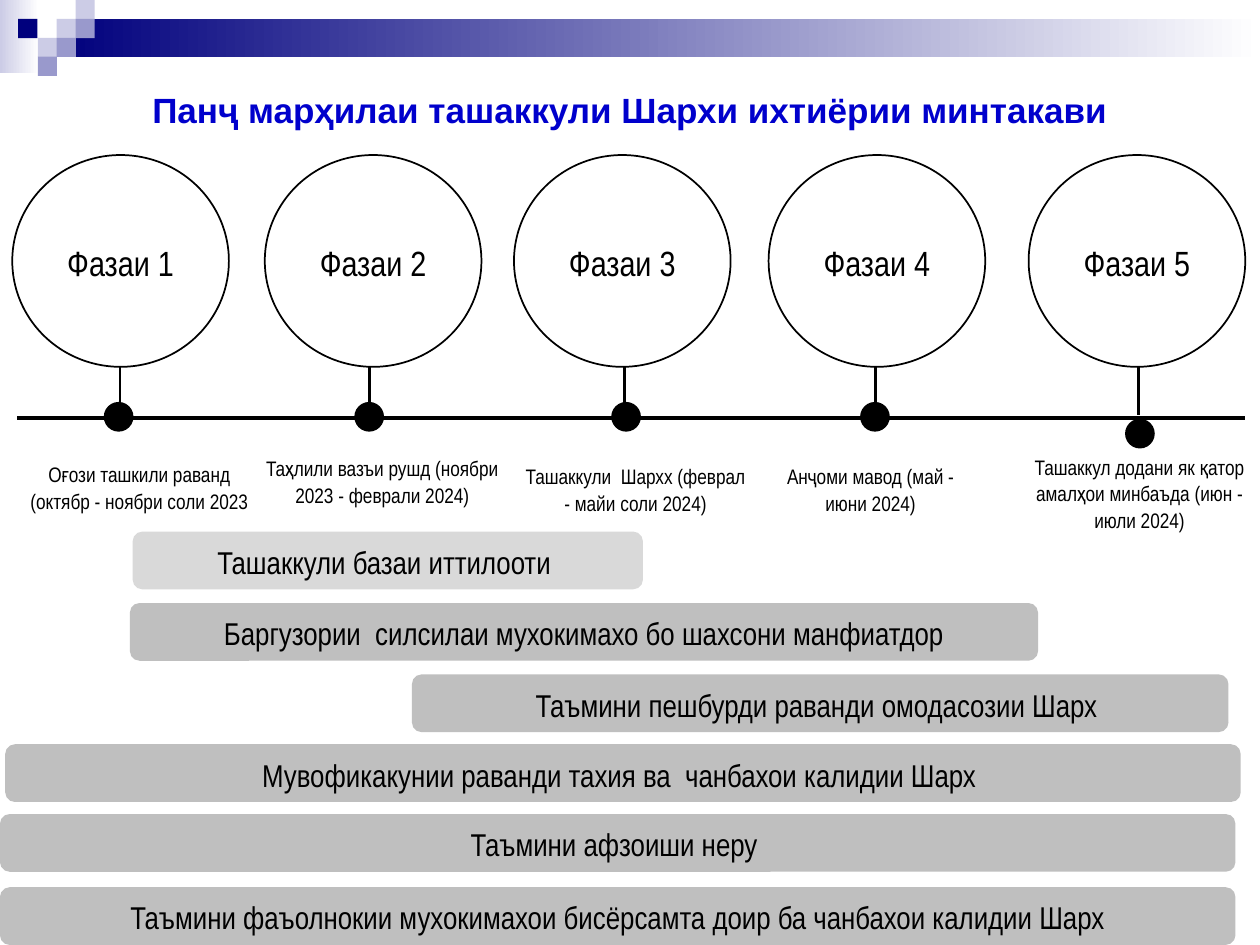
import pptx
import pptx.util
import pptx.dml.color
import pptx.enum.shapes
import pptx.enum.text
import pptx.oxml.ns
import lxml.etree

Pt = pptx.util.Pt
Kind = pptx.enum.shapes.MSO_SHAPE
HUES = {
    "navy": "00007D", "blue": "0000CC", "mauve": "9999CC", "mist": "CCCCE6",
    "white": "FFFFFF", "black": "000000", "light": "D9D9D9", "gray": "BFBFBF",
}


class Deck:
    def __init__(self):
        self.file = pptx.Presentation()
        self.file.slide_width = Pt(720)
        self.file.slide_height = Pt(540)
        self.slide = self.file.slides.add_slide(self.file.slide_layouts[6])
        self.face = "Arial Narrow"

    def hue(self, name):
        return pptx.dml.color.RGBColor.from_string(HUES[name])

    def shape(self, kind, box, fill, edge=None):
        item = self.slide.shapes.add_shape(kind, *map(Pt, box))
        item.shadow.inherit = False
        item.fill.solid()
        item.fill.fore_color.rgb = self.hue(fill)
        if edge:
            item.line.color.rgb = self.hue(edge)
            item.line.width = Pt(1)
        else:
            item.line.fill.background()
        return item

    def fade(self, box, start, end):
        item = self.shape(Kind.RECTANGLE, box, start)
        item.fill.gradient()
        item.fill.gradient_angle = 0
        for stop, name, place in zip(item.fill.gradient_stops, (start, end), (0, 1)):
            stop.color.rgb = self.hue(name)
            stop.position = place

    def line(self, start, end, width):
        item = self.slide.shapes.add_connector(
            pptx.enum.shapes.MSO_CONNECTOR.STRAIGHT, *map(Pt, start + end))
        item.line.color.rgb = self.hue("black")
        item.line.width = Pt(width)
        lxml.etree.SubElement(item._element.spPr, pptx.oxml.ns.qn("a:effectLst"))

    def text(self, item, words, size, inset=True, after=0):
        frame = item.text_frame
        frame.word_wrap = True
        frame.vertical_anchor = pptx.enum.text.MSO_ANCHOR.MIDDLE
        if not inset:
            frame.margin_left = frame.margin_right = 0
            frame.margin_top = frame.margin_bottom = 0
        para = frame.paragraphs[0]
        para.alignment = pptx.enum.text.PP_ALIGN.CENTER
        para.line_spacing = 1.07
        para.space_after = Pt(after)
        run = para.add_run()
        run.text = words
        run.font.name = self.face
        run.font.size = Pt(size)
        run.font.color.rgb = self.hue("black")
        return run

    def title(self, box, words):
        item = self.slide.shapes.add_textbox(*map(Pt, box))
        run = self.text(item, words, 20)
        item.text_frame.paragraphs[0].line_spacing = 1
        run.font.name = "Arial"
        run.font.bold = True
        run.font.color.rgb = self.hue("blue")

    def phase(self, words, left, stem, dot, drop):
        self.line((stem, 209.6), (stem, 237), 1.5)
        disc = self.shape(Kind.OVAL, (left, 88.6, 123.8, 121), "white", "black")
        self.text(disc, words, 20, after=8)
        self.shape(Kind.OVAL, (dot, 230.2 + drop, 16, 16), "black", "black")

    def note(self, box, words):
        item = self.shape(Kind.RECTANGLE, box, "white")
        self.text(item, words, 12, inset=False)

    def bar(self, left, top, width, fill, after, words):
        item = self.shape(Kind.ROUNDED_RECTANGLE, (left, top, width, 33), fill)
        self.text(item, words, 18, inset=False, after=after)


def main():
    deck = Deck()
    deck.fade((0, 0, 22.3, 41.8), "mist", "white")
    deck.fade((32.4, 10.8, 687.6, 21.6), "navy", "white")
    tiles = [
        (32.4, 10.8, "mist"), (43.2, 0, "mist"), (43.2, 10.8, "mauve"),
        (21.6, 21.6, "mist"), (10.4, 10.8, "navy"),
        (32.4, 21.6, "mauve"), (21.6, 32.4, "mauve"),
    ]
    for left, top, fill in tiles:
        deck.shape(Kind.RECTANGLE, (left, top, 11, 11), fill)
    deck.title((36, 36, 648, 52.6), "Панҷ марҳилаи ташаккули Шархи ихтиёрии минтакави")

    deck.line((10, 238.8), (711.4, 238.8), 2.25)
    phases = [
        (7, 68.6, 59.8, 0), (151.3, 211, 203, 0), (293.7, 357, 349.8, 0),
        (439.2, 500.3, 492, 0), (587.8, 650.6, 643.4, 9.6),
    ]
    for rank, place in enumerate(phases, 1):
        deck.phase(f"Фазаи {rank}", *place)

    notes = [
        ((9.4, 247.7, 140.4, 60.5), "Оғози ташкили раванд (октябр - ноябри соли 2023"),
        ((151.2, 249.8, 134.6, 50.4), "Таҳлили вазъи рушд (ноябри 2023 - феврали 2024)"),
        ((300.2, 258.5, 126, 41.8), "Ташаккули  Шархх (феврал - майи соли 2024)"),
        ((443.5, 258.5, 108, 41.8), "Анҷоми мавод (май - июни 2024)"),
        ((591.1, 257.8, 120.2, 47.5),
         "Ташаккул додани як қатор амалҳои минбаъда (июн - июли 2024)"),
    ]
    for box, words in notes:
        deck.note(box, words)

    bars = [
        (75.8, 303.8, 291.6, "light", 0, "Ташаккули базаи иттилооти "),
        (74.2, 344.6, 519, "gray", 8,
         "Баргузории  силсилаи мухокимахо бо шахсони манфиатдор"),
        (235.4, 385.4, 466.6, "gray", 8, "Таъмини пешбурди раванди омодасозии Шарх "),
        (3, 425.3, 706, "gray", 8,
         "Мувофикакунии раванди тахия ва  чанбахои калидии Шарх "),
        (0, 465.2, 706, "gray", 8, "Таъмини афзоиши неру "),
        (0, 507, 706, "gray", 8,
         "Таъмини фаъолнокии мухокимахои бисёрсамта доир ба чанбахои калидии Шарх"),
    ]
    for row in bars:
        deck.bar(*row)
    deck.file.save("out.pptx")


if __name__ == "__main__":
    main()
